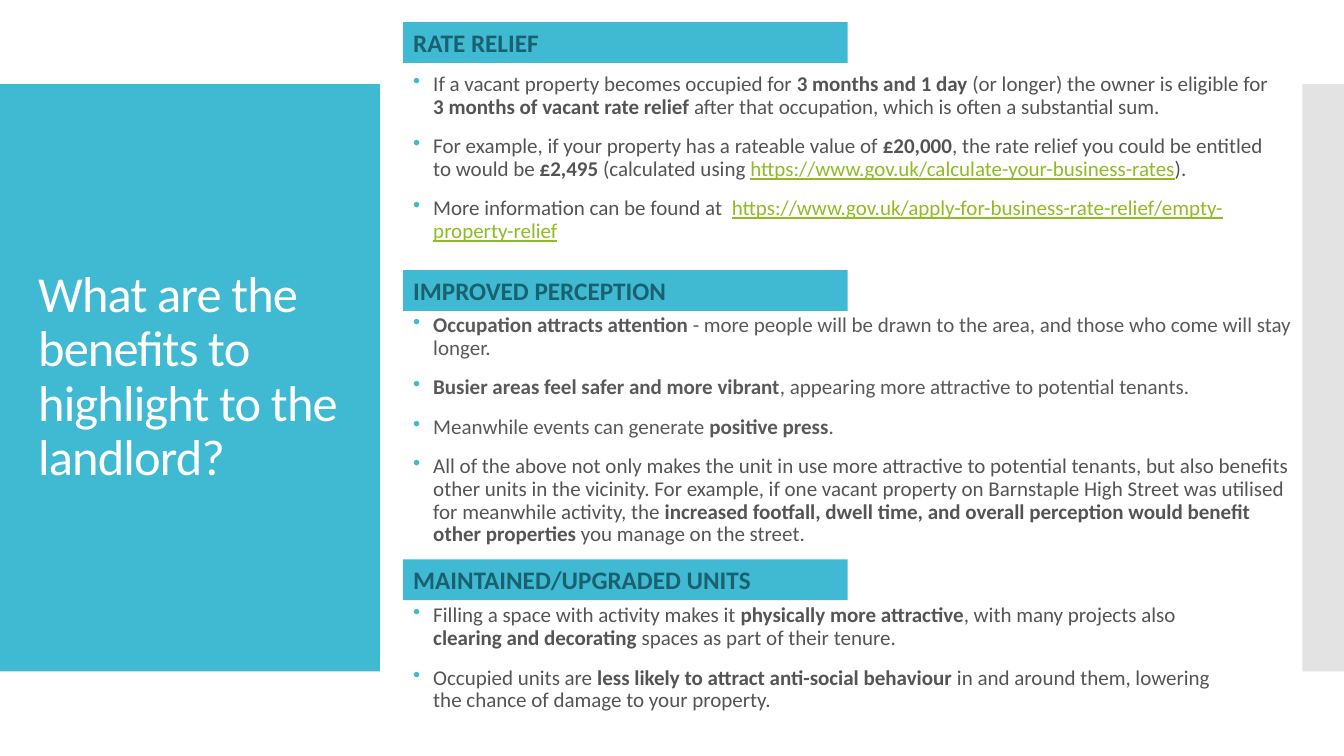
from lxml.etree import SubElement
from pptx import Presentation
from pptx.dml.color import RGBColor
from pptx.enum.shapes import MSO_SHAPE
from pptx.enum.text import MSO_ANCHOR, MSO_AUTO_SIZE, PP_ALIGN
from pptx.oxml.ns import qn
from pptx.util import Pt

COLOURS = {
    "teal": "40BAD2",
    "deep teal": "1A616F",
    "text": "545454",
    "soft text": "595959",
    "link": "90BB23",
    "white": "FFFFFF",
    "grey": "C8C8C8",
}
COLUMN_LEFT = 288


def colour(name):
    return RGBColor.from_string(COLOURS[name])


class SlideBuilder:
    font_name = "Calibri"
    title_size = 36
    heading_size = 18
    body_size = 15
    line_spacing = 0.9
    paragraph_gap = 12
    indent = 14.4

    def __init__(self, presentation):
        self.slide = presentation.slides.add_slide(presentation.slide_layouts[5])

    def run(self, paragraph, text, size, colour_name, bold=False, underline=False):
        run = paragraph.add_run()
        run.text = text
        run.font.name = self.font_name
        run.font.size = Pt(size)
        run.font.bold = bold
        run.font.underline = underline
        run.font.color.rgb = colour(colour_name)
        return run

    def panel(self, left, top, width, height, fill, opacity=100):
        shape = self.slide.shapes.add_shape(
            MSO_SHAPE.RECTANGLE, Pt(left), Pt(top), Pt(width), Pt(height)
        )
        shape.shadow.inherit = False
        shape.fill.solid()
        shape.fill.fore_color.rgb = colour(fill)
        shape.line.fill.background()
        if opacity < 100:
            fill_colour = shape.element.spPr.find(qn("a:solidFill"))[0]
            SubElement(fill_colour, qn("a:alpha"), val=str(opacity * 1000))
        return shape

    def title(self, text, left, top, width, height):
        title = self.slide.shapes.title
        title.left, title.top = Pt(left), Pt(top)
        title.width, title.height = Pt(width), Pt(height)
        title.element.getparent().append(title.element)
        frame = title.text_frame
        frame.word_wrap = True
        frame.auto_size = MSO_AUTO_SIZE.NONE
        frame.vertical_anchor = MSO_ANCHOR.MIDDLE
        paragraph = frame.paragraphs[0]
        paragraph.alignment = PP_ALIGN.LEFT
        paragraph.line_spacing = self.line_spacing
        run = self.run(paragraph, text, self.title_size, "white")
        run.font._element.set("spc", "-60")

    def heading(self, text, top):
        shape = self.panel(COLUMN_LEFT, top, 317.5, 29.08, "teal")
        shape.text_frame.vertical_anchor = MSO_ANCHOR.MIDDLE
        paragraph = shape.text_frame.paragraphs[0]
        paragraph.alignment = PP_ALIGN.LEFT
        self.run(paragraph, text, self.heading_size, "deep teal", bold=True)

    def bullet(self, paragraph):
        properties = paragraph._p.get_or_add_pPr()
        properties.set("marL", str(Pt(self.indent)))
        properties.set("indent", str(-Pt(self.indent)))
        bullet_colour = SubElement(properties, qn("a:buClr"))
        SubElement(bullet_colour, qn("a:srgbClr"), val=COLOURS["teal"])
        SubElement(properties, qn("a:buChar"), char="•")

    def bullet_list(self, top, width, height, anchor, paragraphs):
        box = self.slide.shapes.add_textbox(
            Pt(COLUMN_LEFT), Pt(top), Pt(width), Pt(height)
        )
        frame = box.text_frame
        frame.word_wrap = True
        frame.vertical_anchor = anchor
        for index, (colour_name, runs) in enumerate(paragraphs):
            paragraph = frame.add_paragraph() if index else frame.paragraphs[0]
            self.bullet(paragraph)
            paragraph.line_spacing = self.line_spacing
            if index:
                paragraph.space_before = Pt(self.paragraph_gap)
            for text, kind in runs:
                is_link = kind == "link"
                self.run(
                    paragraph, text, self.body_size,
                    "link" if is_link else colour_name,
                    bold=kind == "bold", underline=is_link,
                )


SECTIONS = [
    ("RATE RELIEF", 15.84, (48.96, 626.4, 129.6, MSO_ANCHOR.TOP), [
        ("text", [
            ("If a vacant property becomes occupied for ", "plain"),
            ("3 months and 1 day ", "bold"),
            ("(or longer) the owner is eligible for ", "plain"),
            ("3 months of vacant rate relief ", "bold"),
            ("after that occupation, which is often a substantial sum.", "plain"),
        ]),
        ("text", [
            ("For example, if your property has a rateable value of ", "plain"),
            ("£20,000", "bold"),
            (", the rate relief you could be entitled to would be ", "plain"),
            ("£2,495 ", "bold"),
            ("(calculated using ", "plain"),
            ("https://www.gov.uk/calculate-your-business-rates", "link"),
            (").", "plain"),
        ]),
        ("text", [
            ("More information can be found at  ", "plain"),
            ("https://www.gov.uk/apply-for-business-rate-relief/empty-property-relief", "link"),
        ]),
    ]),
    ("IMPROVED PERCEPTION", 192.96, (215.28, 645.84, 184.32, MSO_ANCHOR.MIDDLE), [
        ("soft text", [
            ("Occupation attracts attention ", "bold"),
            ("- more people will be drawn to the area, and those who come will stay longer.", "plain"),
        ]),
        ("soft text", [
            ("Busier areas feel safer and more vibrant", "bold"),
            (", appearing more attractive to potential tenants.", "plain"),
        ]),
        ("soft text", [
            ("Meanwhile events can generate ", "plain"),
            ("positive press", "bold"),
            (".", "plain"),
        ]),
        ("text", [
            ("All of the above not only makes the unit in use more attractive to potential "
             "tenants, but also benefits other units in the vicinity. For example, if one "
             "vacant property on Barnstaple High Street was utilised for meanwhile "
             "activity, the ", "plain"),
            ("increased footfall, dwell time, and overall perception would benefit "
             "other properties ", "bold"),
            ("you manage on the street.", "plain"),
        ]),
    ]),
    ("MAINTAINED/UPGRADED UNITS", 399.6, (428.4, 593.28, 84.96, MSO_ANCHOR.TOP), [
        ("text", [
            ("Filling a space with activity makes it ", "plain"),
            ("physically more attractive", "bold"),
            (", with many projects also ", "plain"),
            ("clearing and decorating ", "bold"),
            ("spaces as part of their tenure.", "plain"),
        ]),
        ("text", [
            ("Occupied units are ", "plain"),
            ("less likely to attract anti-social behaviour", "bold"),
            (" in and around them, lowering the chance of damage to your property.", "plain"),
        ]),
    ]),
]


def main():
    presentation = Presentation()
    presentation.slide_width = Pt(960)
    presentation.slide_height = Pt(540)
    builder = SlideBuilder(presentation)
    builder.panel(0, 60, 271.3, 419.5, "teal")
    builder.panel(930.3, 60, 29.7, 419.5, "grey", opacity=50)
    builder.title(
        "What are the benefits to highlight to the landlord?", 20, 88.5, 232, 362.5
    )
    for heading, heading_top, placement, paragraphs in SECTIONS:
        builder.heading(heading, heading_top)
        builder.bullet_list(*placement, paragraphs)
    presentation.save("out.pptx")


if __name__ == "__main__":
    main()
